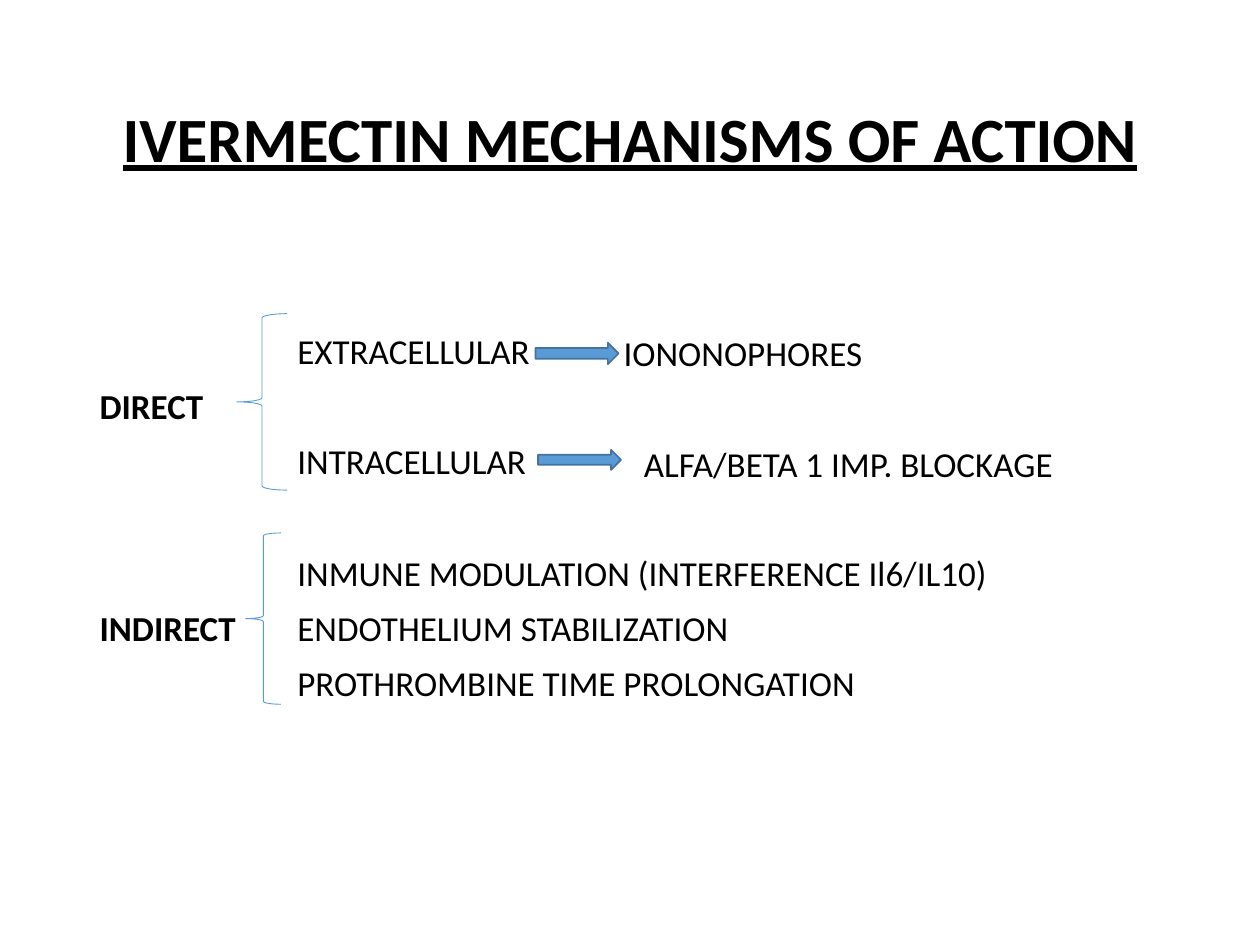
from lxml.etree import SubElement
from pptx import Presentation
from pptx.dml.color import RGBColor
from pptx.enum.shapes import MSO_SHAPE as Shape
from pptx.enum.text import MSO_ANCHOR as Anchor, MSO_AUTO_SIZE as AutoSize, PP_ALIGN as Align
from pptx.oxml.ns import qn
from pptx.util import Inches, Pt

BLACK = RGBColor(0x00, 0x00, 0x00)
BLUE = RGBColor(0x5B, 0x9B, 0xD5)
DARK_BLUE = RGBColor(0x43, 0x73, 0x9E)

MECHANISM_INDENT = 1.57
LINE_GAP = 10
GROUP_GAP = 42

# group label, mechanism, space before
MECHANISMS = [
    ("", "EXTRACELLULAR", 0),
    ("DIRECT", "", LINE_GAP),
    ("", "INTRACELLULAR", LINE_GAP),
    ("", "INMUNE MODULATION (INTERFERENCE Il6/IL10)", GROUP_GAP),
    ("INDIRECT", "ENDOTHELIUM STABILIZATION", LINE_GAP),
    ("", "PROTHROMBINE TIME PROLONGATION", LINE_GAP),
]
EFFECTS = [
    ("IONONOPHORES", (4.95, 2.6, 2.2, 0.4)),
    ("ALFA/BETA 1 IMP. BLOCKAGE", (5.11, 3.48, 3.6, 0.4)),
]
BRACES = [(1.88, 2.49, 0.4, 1.4), (1.95, 4.23, 0.28, 1.36)]
ARROWS = [(4.25, 2.72, 0.66, 0.17), (4.27, 3.57, 0.66, 0.16)]


def place(item, left, top, width, height):
    item.left, item.top = Inches(left), Inches(top)
    item.width, item.height = Inches(width), Inches(height)


def add_text(paragraph, text, size=20, bold=False, underline=False):
    run = paragraph.add_run()
    run.text = text
    font = run.font
    font.name, font.size = "Calibri", Pt(size)
    font.bold, font.underline = bold, underline
    font.color.rgb = BLACK


def set_indent(paragraph, hanging):
    """Remove the bullet and start at the mechanism column, or hang a label before it."""
    properties = paragraph._p.get_or_add_pPr()
    indent = Inches(MECHANISM_INDENT)
    properties.set("marL", str(indent))
    properties.set("indent", str(-indent if hanging else 0))
    SubElement(properties, qn("a:buNone"))


def fill_title(title):
    place(title, 0.69, 0.4, 8.62, 1.45)
    frame = title.text_frame
    frame.auto_size = AutoSize.NONE
    frame.vertical_anchor = Anchor.MIDDLE
    heading = frame.paragraphs[0]
    heading.alignment = Align.CENTER
    heading.line_spacing = 0.9
    add_text(heading, "IVERMECTIN MECHANISMS OF ACTION", size=36, bold=True, underline=True)


def fill_mechanisms(body):
    place(body, 0.69, 2, 8.62, 4.76)
    frame = body.text_frame
    frame.auto_size = AutoSize.NONE
    frame.vertical_anchor = Anchor.TOP
    frame.margin_top = Inches(0.65)
    for index, (group, mechanism, gap) in enumerate(MECHANISMS):
        line = frame.add_paragraph() if index else frame.paragraphs[0]
        set_indent(line, hanging=bool(group))
        line.line_spacing = 0.9
        line.space_before = Pt(gap)
        if group:
            add_text(line, group, bold=True)
        if mechanism:
            add_text(line, "\t" + mechanism if group else mechanism)


def add_effect(slide, effect, box):
    frame = slide.shapes.add_textbox(*map(Inches, box)).text_frame
    frame.word_wrap = True
    frame.vertical_anchor = Anchor.MIDDLE
    frame.margin_left = frame.margin_right = 0
    frame.margin_top = frame.margin_bottom = 0
    add_text(frame.paragraphs[0], effect)


def add_figure(slide, kind, box, line_color, line_width, fill=None):
    figure = slide.shapes.add_shape(kind, *map(Inches, box))
    figure.shadow.inherit = False
    figure.line.color.rgb = line_color
    figure.line.width = Pt(line_width)
    if fill is None:
        figure.fill.background()
    else:
        figure.fill.solid()
        figure.fill.fore_color.rgb = fill


def main():
    deck = Presentation()
    deck.slide_width, deck.slide_height = Inches(10), Inches(7.5)
    slide = deck.slides.add_slide(deck.slide_layouts[1])
    fill_title(slide.shapes.title)
    fill_mechanisms(slide.placeholders[1])
    for effect, box in EFFECTS:
        add_effect(slide, effect, box)
    for box in BRACES:
        add_figure(slide, Shape.LEFT_BRACE, box, BLUE, 0.5)
    for box in ARROWS:
        add_figure(slide, Shape.RIGHT_ARROW, box, DARK_BLUE, 1, fill=BLUE)
    deck.save("out.pptx")


if __name__ == "__main__":
    main()
